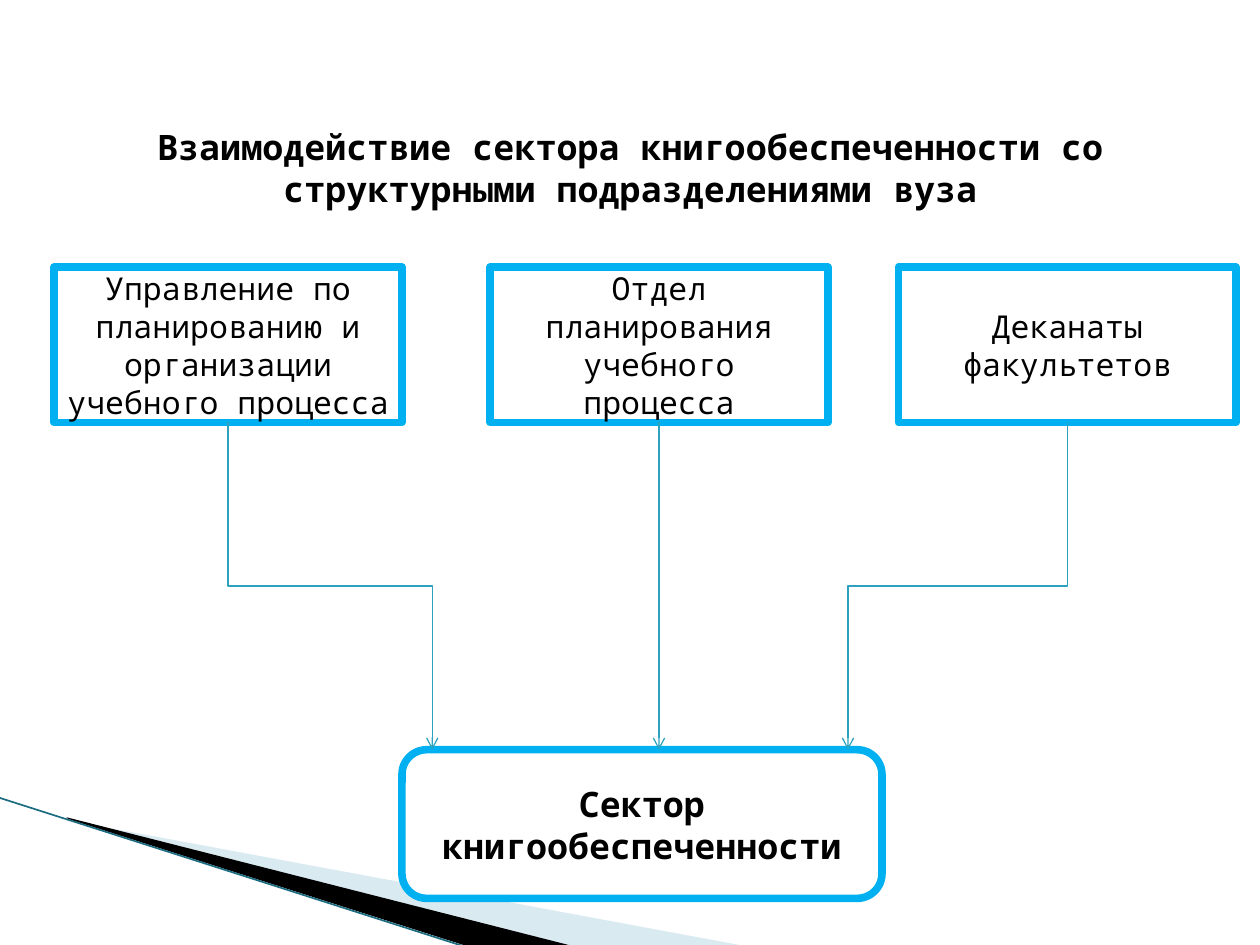
from dataclasses import dataclass
from lxml.etree import SubElement
from pptx import Presentation
from pptx.dml.color import RGBColor
from pptx.enum.shapes import MSO_CONNECTOR, MSO_SHAPE
from pptx.enum.text import MSO_ANCHOR, PP_ALIGN
from pptx.oxml.ns import qn
from pptx.util import Pt

HUES = {"frame": "00B0F0", "arrow": "2DA2BF", "ink": "000000", "paper": "FFFFFF",
        "pale": "A0CBDC", "edge": "1B6C80"}
FONT = {"name": "Noto Sans Mono", "size": Pt(18), "bold": False}
HEAD = {**FONT, "size": Pt(20), "bold": True}
TOP, TALL, GOAL = 152.64, 88.8, 428.4


@dataclass
class Box:
    text: str
    left: float
    top: float
    width: float
    height: float
    kind: MSO_SHAPE = MSO_SHAPE.RECTANGLE
    fill: str = "paper"
    bold: bool = False


@dataclass
class Wedge:
    points: list
    hue: str
    alpha: int = 100


UNITS = [
    Box("Управление по планированию и организации учебного процесса",
        30.96, TOP, 198.72, TALL, fill=""),
    Box("Отдел планирования учебного процесса", 280.08, TOP, 192.96, TALL),
    Box("Деканаты факультетов", 513.36, TOP, 192.96, TALL),
]
SECTOR = Box("Сектор книгообеспеченности", 229.68, GOAL, 274.32, 84.96,
             MSO_SHAPE.ROUNDED_RECTANGLE, bold=True)
WEDGES = [
    Wedge([(39.6, 468.7), (428.4, 540.7), (328.3, 540.7), (39.6, 468)], "pale", 40),
    Wedge([(38.2, 467.3), (329, 540.7), (267.8, 541.4), (38.9, 468)], "ink"),
]


def tint(hue: str) -> RGBColor:
    """Return the named colour."""
    return RGBColor.from_string(HUES[hue])


def write(frame, text: str, style: dict) -> None:
    """Put centred text in a frame."""
    frame.word_wrap = True
    para = frame.paragraphs[0]
    para.alignment = PP_ALIGN.CENTER
    run = para.add_run()
    run.text = text
    for key, value in style.items():
        setattr(run.font, key, value)
    run.font.color.rgb = tint("ink")


def draw_wedge(shapes, wedge: Wedge) -> None:
    """Draw one corner wedge."""
    form = shapes.build_freeform(*wedge.points[0], scale=Pt(1))
    form.add_line_segments(wedge.points[1:], close=True)
    shape = form.convert_to_shape()
    shape.shadow.inherit = False
    shape.fill.solid()
    shape.fill.fore_color.rgb = tint(wedge.hue)
    shape.line.fill.background()
    if wedge.alpha < 100:
        color = next(shape._element.spPr.iter(qn("a:srgbClr")))
        SubElement(color, qn("a:alpha"), val=str(wedge.alpha * 1000))


def draw_box(shapes, box: Box):
    """Draw a framed box with its label."""
    area = map(Pt, (box.left, box.top, box.width, box.height))
    shape = shapes.add_shape(box.kind, *area)
    shape.shadow.inherit = False
    if box.fill:
        shape.fill.solid()
        shape.fill.fore_color.rgb = tint(box.fill)
    else:
        shape.fill.background()
    shape.line.color.rgb = tint("frame")
    shape.line.width = Pt(4.33)
    SubElement(shape.line._get_or_add_ln(), qn("a:round"))
    shape.text_frame.vertical_anchor = MSO_ANCHOR.MIDDLE
    write(shape.text_frame, box.text, HEAD if box.bold else FONT)
    return shape


def draw_line(shapes, kind, ends: tuple, hue: str, width: float, arrow: bool = True):
    """Draw a connector, with an arrowhead if asked."""
    line = shapes.add_connector(kind, *map(Pt, ends))
    line.line.color.rgb = tint(hue)
    line.line.width = Pt(width)
    if arrow:
        SubElement(line.line._get_or_add_ln(), qn("a:tailEnd"), type="arrow")
    SubElement(line._element.spPr, qn("a:effectLst"))
    return line


def draw_elbow(shapes, x1: float, y1: float, x2: float, y2: float) -> None:
    """Draw an elbow arrow that leaves downwards."""
    side = 1 if x2 < x1 else -1
    mid_x, mid_y = (x1 + x2) / 2, (y1 + y2) / 2
    run, rise = side * (y2 - y1) / 2, abs(x2 - x1) / 2
    ends = (mid_x - run, mid_y - rise, mid_x + run, mid_y + rise)
    line = draw_line(shapes, MSO_CONNECTOR.ELBOW, ends, "arrow", 0.75)
    line.rotation = 90 * side % 360


def main() -> None:
    """Build the slide and save it."""
    deck = Presentation()
    deck.slide_width, deck.slide_height = Pt(720), Pt(540)
    shapes = deck.slides.add_slide(deck.slide_layouts[6]).shapes
    for wedge in WEDGES:
        draw_wedge(shapes, wedge)
    draw_line(shapes, MSO_CONNECTOR.STRAIGHT, (-0.72, 455.76, 267.12, 541.44),
              "edge", 0.95, arrow=False)
    draw_box(shapes, SECTOR)
    rects = [draw_box(shapes, unit) for unit in UNITS]
    base = TOP + TALL
    left, mid, right = (unit.left + unit.width / 2 for unit in UNITS)
    draw_elbow(shapes, right, base, 484.56, GOAL)
    draw_elbow(shapes, left, base, 246.96, GOAL)
    line = draw_line(shapes, MSO_CONNECTOR.STRAIGHT, (mid, base, mid, GOAL), "arrow", 0.75)
    line.begin_connect(rects[1], 2)
    title = shapes.add_textbox(*map(Pt, (14.4, 68.4, 691.92, 55.44)))
    write(title.text_frame, "Взаимодействие сектора книгообеспеченности со "
          "структурными подразделениями вуза", HEAD)
    deck.save("out.pptx")


if __name__ == "__main__":
    main()
